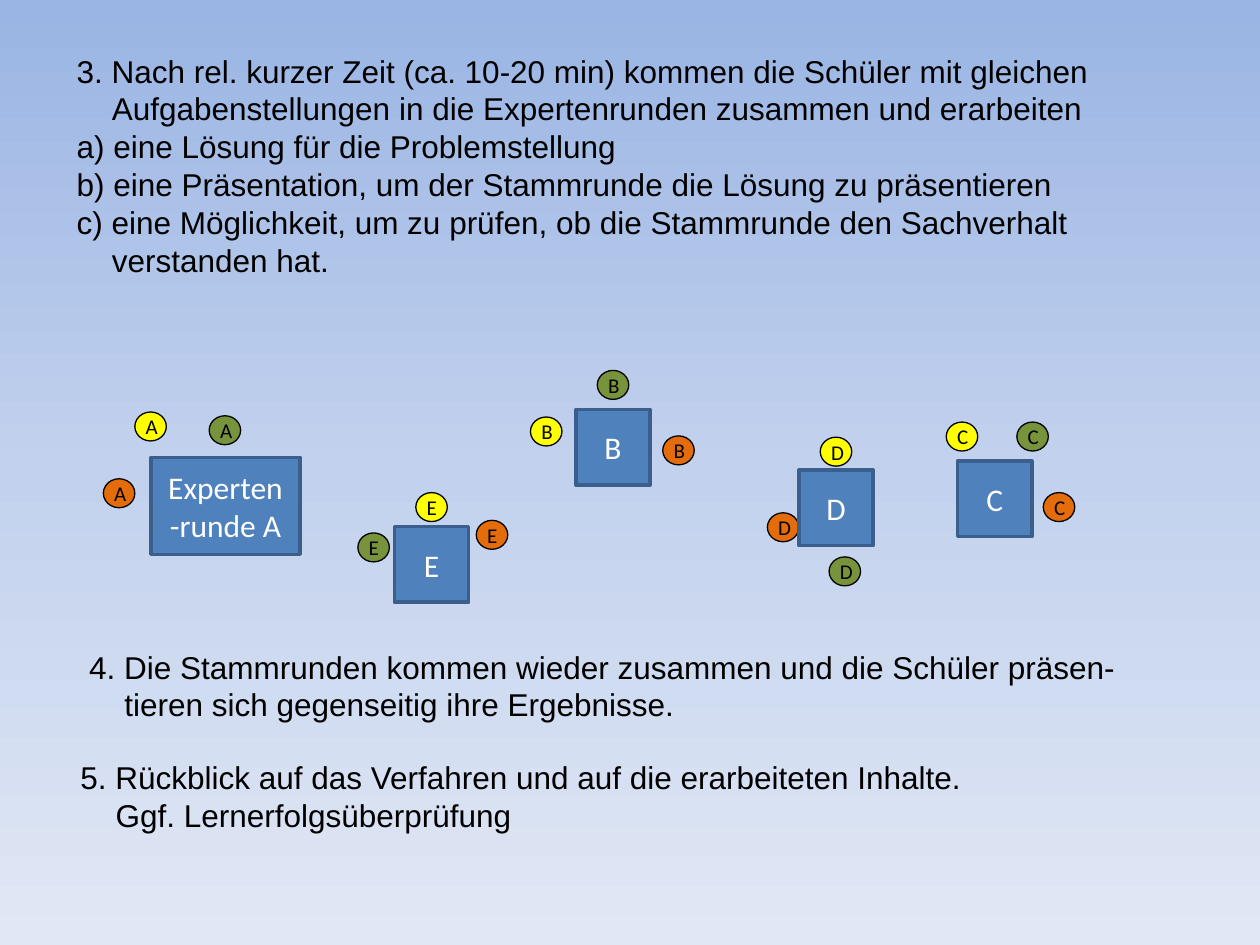
from copy import deepcopy
from dataclasses import dataclass

from pptx import Presentation
from pptx import util as u
from pptx.dml.color import RGBColor
from pptx.enum import shapes, text
from pptx.oxml.ns import qn


@dataclass(frozen=True)
class Theme:
    sky: tuple = ((0, "9AB5E4"), (0.5, "C2D1ED"), (1, "E1E8F5"))
    pupils: tuple = ("FFFF00", "77933C", "E46C0A")
    table: str = "4F81BD"
    table_edge: str = "3A5F8C"
    ink: str = "000000"
    light: str = "FFFFFF"
    body_font: str = "Arial"
    label_font: str = "Calibri"
    body_size: int = 18
    pupil_size: int = 12


theme = Theme()
deck = Presentation()
deck.slide_width, deck.slide_height = u.Inches(10), u.Inches(7.5)
page = deck.slides.add_slide(deck.slide_layouts[6])

# The slide is a grid of 100 columns by 75 rows
column, row = deck.slide_width / 100, deck.slide_height / 75


def add_span(para, words, font, size, color):
    span = para.add_run()
    span.text = words
    span.font.name, span.font.size = font, u.Pt(size)
    span.font.color.rgb = RGBColor.from_string(color)


def add_figure(kind, place, fill, edge, edge_width):
    left, top, width, height = place
    figure = page.shapes.add_shape(kind, round(left * column), round(top * row),
                                   round(width * column), round(height * row))
    figure.shadow.inherit = False
    figure.fill.solid()
    figure.fill.fore_color.rgb = RGBColor.from_string(fill)
    figure.line.color.rgb = RGBColor.from_string(edge)
    figure.line.width = u.Pt(edge_width)
    figure.text_frame.vertical_anchor = text.MSO_ANCHOR.MIDDLE
    return figure


# Background: three-stop gradient from top to bottom
sky = page.background.fill
sky.gradient()
sky.gradient_angle = 270
stop_list = page.element.find(".//" + qn("a:gsLst"))
stop_list.append(deepcopy(stop_list[-1]))
for stop, (position, color) in zip(sky.gradient_stops, theme.sky):
    stop.position = position
    stop.color.rgb = RGBColor.from_string(color)

# Expert rounds: label, table place, then yellow, green and orange pupil
rounds = [
    ("A", "Experten-runde A", (12, 36.3, 11.8, 7.7),
     [(10.7, 32.7), (16.6, 33), (8.2, 38)]),
    ("E", "E", (31.3, 41.8, 5.9, 6), [(33, 39.1), (28.4, 42.3), (37.8, 41.3)]),
    ("B", "B", (45.7, 32.5, 5.9, 6), [(42.1, 33.1), (47.4, 29.4), (52.6, 34.6)]),
    ("D", "D", (63.4, 37.3, 5.9, 6), [(65.1, 34.7), (65.8, 44.2), (60.9, 40.7)]),
    ("C", "C", (76, 36.6, 5.9, 6), [(75.1, 33.5), (80.7, 33.5), (82.8, 39.1)]),
]
for letter, label, place, seats in rounds:
    for seat, color in zip(seats, theme.pupils):
        pupil = add_figure(shapes.MSO_SHAPE.OVAL, (*seat, 2.5, 2.3),
                           color, theme.ink, 0.75)
        frame = pupil.text_frame
        frame.word_wrap = False
        frame.margin_left = frame.margin_top = frame.margin_bottom = u.Inches(0.05)
        frame.margin_right = u.Inches(0.1)
        para = frame.paragraphs[0]
        para.alignment = text.PP_ALIGN.LEFT
        add_span(para, letter, theme.label_font, theme.pupil_size, theme.ink)
    table = add_figure(shapes.MSO_SHAPE.RECTANGLE, place,
                       theme.table, theme.table_edge, 2)
    table.text_frame.word_wrap = True
    para = table.text_frame.paragraphs[0]
    para.alignment = text.PP_ALIGN.CENTER
    add_span(para, label, theme.label_font, theme.body_size, theme.light)

# Numbered steps: place, then lines with a flag for indented continuations
steps = [
    ((5.1, 3.6, 88.3, 19.2), [
        (False, "3. Nach rel. kurzer Zeit (ca. 10-20 min) kommen die Schüler mit gleichen"),
        (True, "Aufgabenstellungen in die Expertenrunden zusammen und erarbeiten"),
        (False, "a) eine Lösung für die Problemstellung"),
        (False, "b) eine Präsentation, um der Stammrunde die Lösung zu präsentieren"),
        (False, "c) eine Möglichkeit, um zu prüfen, ob die Stammrunde den Sachverhalt"),
        (True, "verstanden hat."),
    ]),
    ((6.1, 50.9, 86.4, 7.1), [
        (False, "4. Die Stammrunden kommen wieder zusammen und die Schüler präsen-"),
        (True, "tieren sich gegenseitig ihre Ergebnisse."),
    ]),
    ((5.4, 59.7, 86.4, 7.1), [
        (False, "5. Rückblick auf das Verfahren und auf die erarbeiteten Inhalte."),
        (True, "Ggf. Lernerfolgsüberprüfung"),
    ]),
]
for (left, top, width, height), lines in steps:
    box = page.shapes.add_textbox(round(left * column), round(top * row),
                                  round(width * column), round(height * row))
    frame = box.text_frame
    frame.word_wrap = True
    frame.auto_size = text.MSO_AUTO_SIZE.SHAPE_TO_FIT_TEXT
    for number, (indented, words) in enumerate(lines):
        para = frame.add_paragraph() if number else frame.paragraphs[0]
        if indented:
            para._p.get_or_add_pPr().set("marL", str(u.Inches(0.28)))
        add_span(para, words, theme.body_font, theme.body_size, theme.ink)

deck.save("out.pptx")
